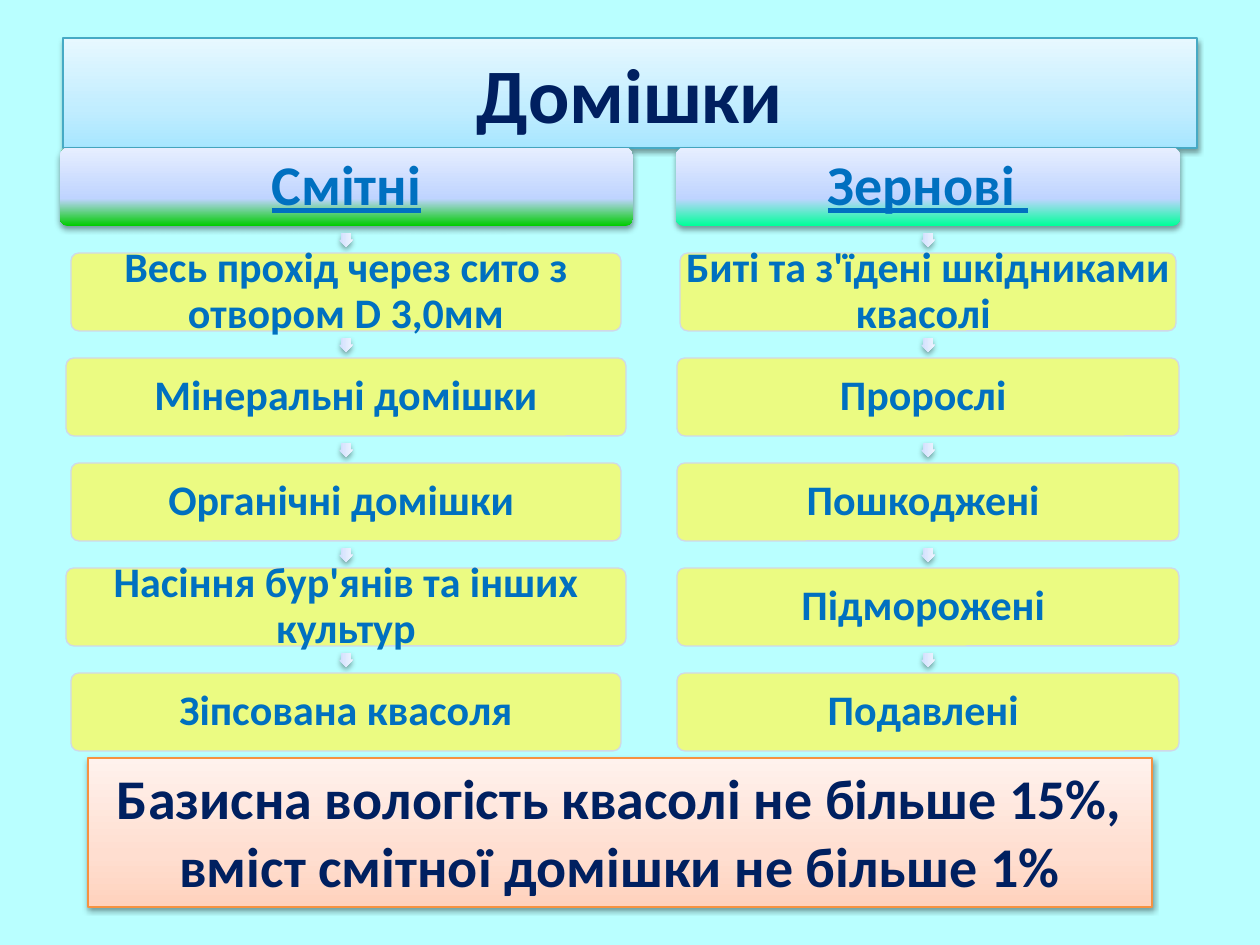
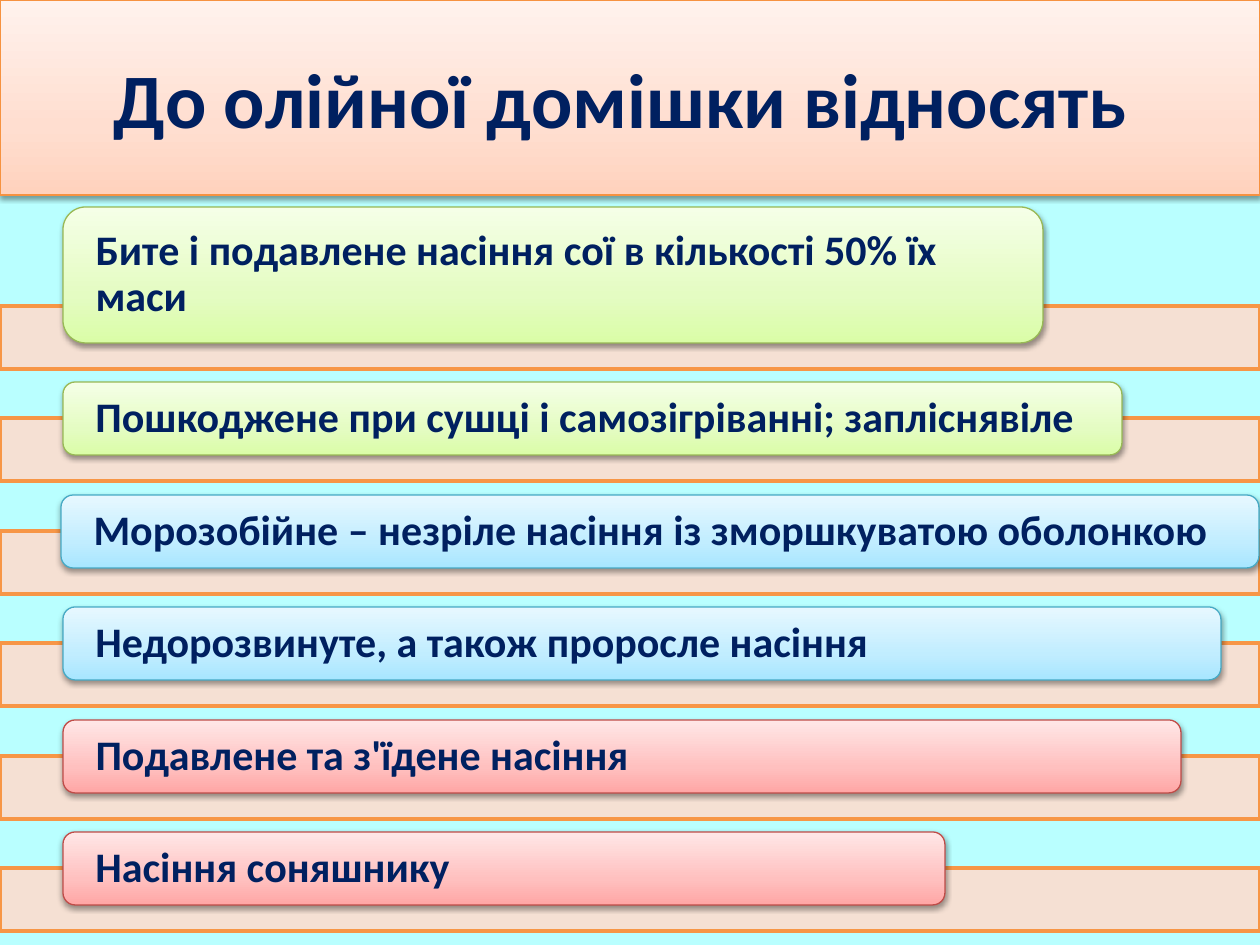
import dataclasses
import typing

import lxml.etree
import pptx
import pptx.dml.color
import pptx.enum.shapes
import pptx.enum.text
import pptx.oxml.ns
import pptx.util

SCALE = 914400 / 126  # EMU in one px
FONT = "Calibri"
GEOM = pptx.enum.shapes.MSO_SHAPE
ALIGN = pptx.enum.text.PP_ALIGN
ANCHOR = pptx.enum.text.MSO_ANCHOR
QN = pptx.oxml.ns.qn

HUE = {
    "page": "B9FFFF",
    "navy": "002060",
    "blue": "0070C0",
    "lemon": "F1FB75",
    "mist": "D0D8E8",
    "cream": "FCDDCF",
    "orange": "F79646",
    "amber": "F69240",
    "teal": "46AAC5",
    "moss": "98B955",
    "brick": "BF4C48",
    "black": "000000",
}


@dataclasses.dataclass(frozen=True)
class Look:
    """Fill and line; three stops make a shaded fill with a shadow."""
    fill: tuple[str, ...]
    line: str = ""
    width: float = 0.75


@dataclasses.dataclass(frozen=True)
class Box:
    x: int
    y: int
    w: int
    h: int


@dataclasses.dataclass(frozen=True)
class Column:
    mid: int
    head: str
    wide: int
    look: Look
    items: tuple[tuple[str, int], ...]


@dataclasses.dataclass(frozen=True)
class Card:
    text: str
    x: int
    w: int
    look: Look
    h: int = 73


PEACH = Look(("FFD2BD", "FFDED0", "FFF2ED"), "amber")
SKY = Look(("A7E6FF", "C1EDFF", "E7F8FF"), "teal")
LIME = Look(("DAFDA7", "E4FCC2", "F5FFE7"), "moss")
ROSE = Look(("FFA6A5", "FFC0BF", "FFE7E7"), "brick")
GREEN = Look(("00CC00", "BFD4FF", "E6EEFF"))
MINT = Look(("00FF99", "BFD4FF", "E6EEFF"))
PALE = Look(("CDDDFE", "DBE6FE", "F0F5FF"))
LEMON = Look(("lemon",), "mist")
BAND = Look(("cream",), "orange", 2)

COLUMNS = (
    Column(346, "Смітні", 573, GREEN, (
        ("Весь прохід через сито з отвором D 3,0мм", 550),
        ("Мінеральні домішки", 560),
        ("Органічні домішки ", 550),
        ("Насіння бур'янів та інших культур", 560),
        ("Зіпсована квасоля", 550),
    )),
    Column(928, "Зернові ", 504, MINT, (
        ("Биті та з'їдені шкідниками квасолі ", 496),
        ("Пророслі ", 502),
        ("Пошкоджені ", 502),
        ("Підморожені ", 502),
        ("Подавлені ", 502),
    )),
)

CARDS = (
    Card("Бите і подавлене насіння сої в кількості 50% їх маси", 63, 980, LIME, 136),
    Card("Пошкоджене при сушці і самозігріванні; запліснявіле", 63, 1059, LIME),
    Card("Морозобійне – незріле насіння із зморшкуватою оболонкою", 61, 1198, SKY),
    Card("Недорозвинуте, а також проросле насіння", 63, 1158, SKY),
    Card("Подавлене та з'їдене насіння", 63, 1118, ROSE),
    Card("Насіння соняшнику", 63, 882, ROSE),
)


def px(n: float) -> int:
    return round(n * SCALE)


def rgb(name: str) -> pptx.dml.color.RGBColor:
    return pptx.dml.color.RGBColor.from_string(HUE[name])


def add(node: typing.Any, tag: str, **attrs: typing.Any) -> typing.Any:
    return lxml.etree.SubElement(node, QN(tag), {k: str(v) for k, v in attrs.items()})


def paint(shape: typing.Any, look: Look) -> None:
    """Give a shape its fill, line and shadow."""
    props = shape.element.spPr
    shape.shadow.inherit = False
    if len(look.fill) == 3:
        shape.fill.gradient()
        shape.fill.gradient_angle = 90
        stops = props.find(".//" + QN("a:gsLst"))
        for old in list(stops):
            stops.remove(old)
        for pos, tone in zip((0, 35000, 100000), look.fill):
            add(add(stops, "a:gs", pos=pos), "a:srgbClr", val=tone)
        shade = add(props.find(QN("a:effectLst")), "a:outerShdw", blurRad=40000,
                    dist=20000, dir=5400000, rotWithShape=0)
        add(add(shade, "a:srgbClr", val=HUE["black"]), "a:alpha", val=38000)
    else:
        shape.fill.solid()
        shape.fill.fore_color.rgb = rgb(look.fill[0])
        tone = props.find(QN("a:solidFill") + "/" + QN("a:srgbClr"))
        add(tone, "a:alpha", val=90000)
    if look.line:
        shape.line.color.rgb = rgb(look.line)
        shape.line.width = pptx.util.Pt(look.width)
    else:
        shape.line.fill.background()


def write(shape: typing.Any, text: str, *, size: int, hue: str = "navy",
          align: typing.Any = ALIGN.CENTER, anchor: typing.Any = ANCHOR.MIDDLE,
          pad: tuple[int, int] = (13, 6), lead: float = 1.0,
          under: bool = False) -> None:
    frame = shape.text_frame
    frame.word_wrap = True
    frame.auto_size = pptx.enum.text.MSO_AUTO_SIZE.NONE
    frame.vertical_anchor = anchor
    frame.margin_left = frame.margin_right = px(pad[0])
    frame.margin_top = frame.margin_bottom = px(pad[1])
    para = frame.paragraphs[0]
    para.alignment = align
    para.line_spacing = lead
    run = para.add_run()
    run.text = text
    font = run.font
    font.name, font.size, font.bold = FONT, pptx.util.Pt(size), True
    font.color.rgb = rgb(hue)
    if under:
        font.underline = True


def draw(slide: typing.Any, kind: typing.Any, box: Box, look: Look,
         *adjust: float) -> typing.Any:
    shape = slide.shapes.add_shape(kind, px(box.x), px(box.y), px(box.w), px(box.h))
    for i, value in enumerate(adjust):
        shape.adjustments[i] = value
    paint(shape, look)
    return shape


def start(deck: typing.Any, text: str, box: Box, look: Look) -> typing.Any:
    """Add a slide with its title panel."""
    slide = deck.slides.add_slide(deck.slide_layouts[5])
    title = slide.shapes.title
    title.left, title.top = px(box.x), px(box.y)
    title.width, title.height = px(box.w), px(box.h)
    paint(title, look)
    write(title, text, size=44)
    return slide


def stack(slide: typing.Any, col: Column) -> None:
    """Draw a heading and its chain of boxes, with arrows between."""
    top, step, high, tip = 148, 105, 78, 14
    for i, (text, wide) in enumerate(((col.head, col.wide), *col.items)):
        y = top + i * step
        head = i == 0
        if not head:
            spot = Box(col.mid - tip // 2, y - 20, tip, tip)
            arrow = draw(slide, GEOM.RIGHT_ARROW, spot, PALE, 0.67, 0.5)
            arrow.rotation = 90
        box = Box(col.mid - wide // 2, y, wide, high)
        shape = draw(slide, GEOM.ROUNDED_RECTANGLE, box,
                     col.look if head else LEMON, 0.1)
        write(shape, text, size=32 if head else 24, hue="blue", pad=(2, 2),
              lead=0.9, under=head)


def shelf(slide: typing.Any, i: int, card: Card) -> None:
    """Draw a full-width band with a card overlapping it."""
    y = (612 + 225 * i) // 2
    draw(slide, GEOM.RECTANGLE, Box(0, y, 1260, 63), BAND)
    box = Box(card.x, y + 37 - card.h, card.w, card.h)
    shape = draw(slide, GEOM.ROUNDED_RECTANGLE, box, card.look)
    curve = round(card.h * 0.05)  # room the rounded corner already takes
    write(shape, card.text, size=24, align=ALIGN.LEFT, pad=(33 - curve, 0), lead=0.9)


def main() -> None:
    deck = pptx.Presentation()
    deck.slide_width, deck.slide_height = px(1260), px(945)
    page = deck.slide_master.background.fill
    page.solid()
    page.fore_color.rgb = rgb("page")

    # Slide 1: two kinds of admixture
    slide = start(deck, "Домішки", Box(63, 38, 1134, 110), SKY)
    note = draw(slide, GEOM.RECTANGLE, Box(88, 758, 1064, 149), PEACH)
    write(note, "Базисна вологість квасолі не більше 15%, "
          "вміст смітної домішки не більше 1%", size=32, anchor=ANCHOR.TOP)
    for col in COLUMNS:
        stack(slide, col)

    # Slide 2: oil admixture
    slide = start(deck, "До олійної домішки відносять ", Box(0, 0, 1260, 195), PEACH)
    for i, card in enumerate(CARDS):
        shelf(slide, i, card)

    deck.save("out.pptx")


if __name__ == "__main__":
    main()
